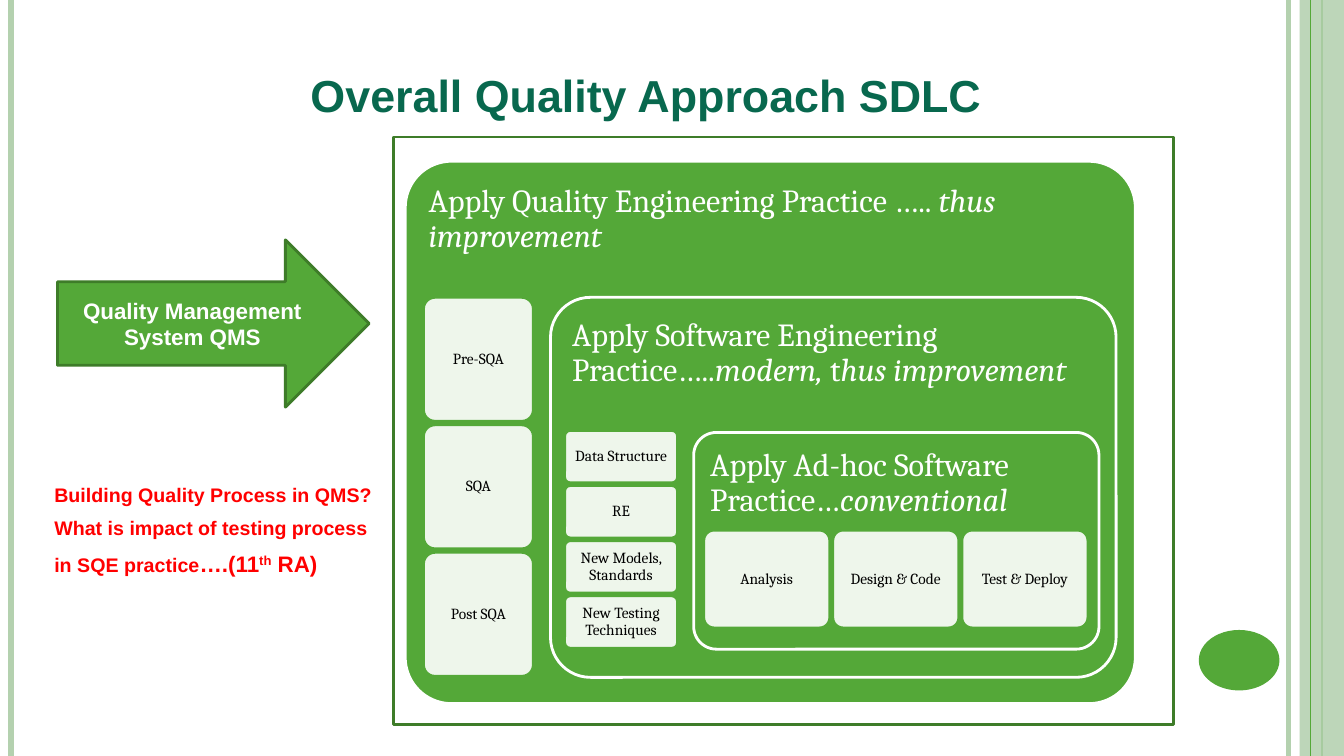
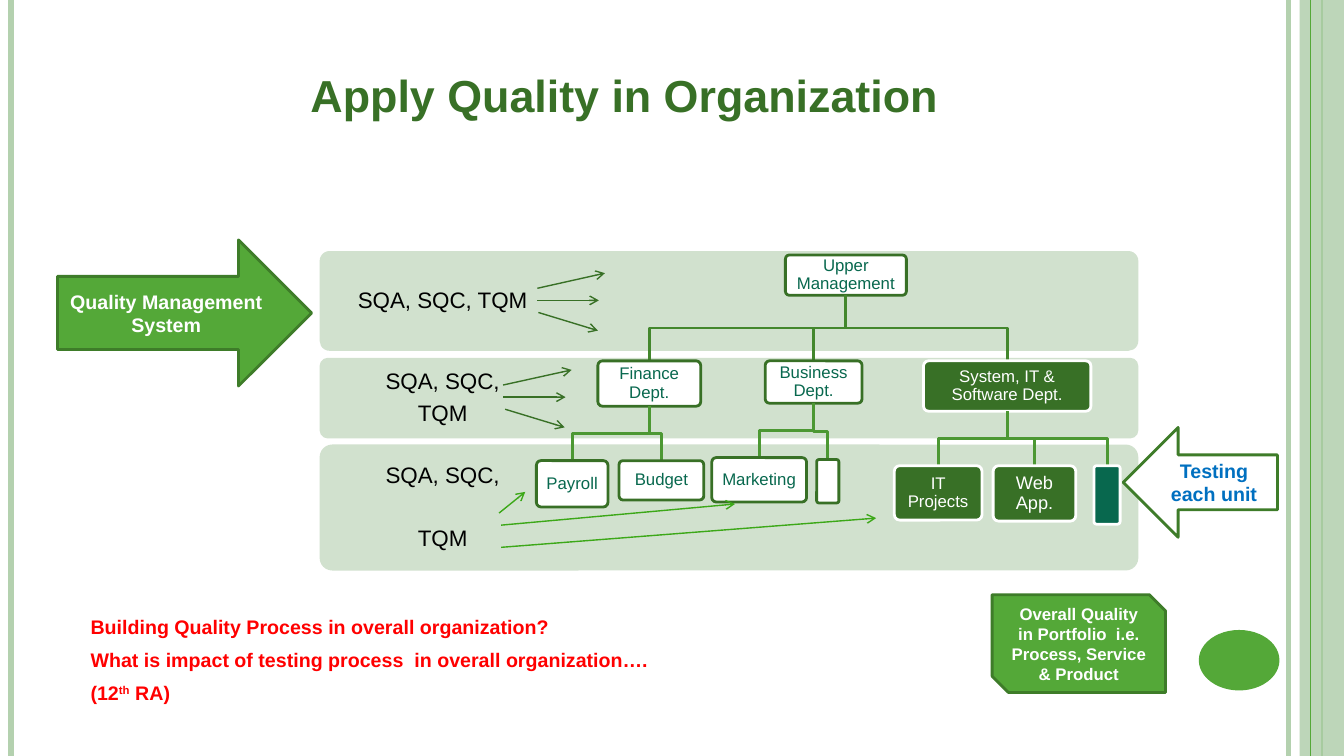
"""Build two slides on quality management in development and in an organization."""
from lxml import etree
from pptx import Presentation
from pptx import util as u
from pptx.dml.color import RGBColor
from pptx.enum import shapes, text
from pptx.oxml.ns import qn

WIDTH, HEIGHT = 13.33, 7.5
GREEN, EDGE, DARK, TEAL = "54A838", "3E7C29", "387026", "08684E"
PALE, BAND, WHITE, BLACK, RED, BLUE = "B4D1AF", "D1E1CE", "FFFFFF", "000000", "FF0000", "0070C0"
BRANCH, TWIG, BRIGHT = "43872D", "4C9833", "3CA818"
KIND = shapes.MSO_SHAPE
MIDDLE, TOP = text.MSO_ANCHOR.MIDDLE, text.MSO_ANCHOR.TOP
CENTER, LEFT = text.PP_ALIGN.CENTER, text.PP_ALIGN.LEFT
ITALIC, RAISED, LARGE = {"italic": True}, {"raised": True}, {"size": 16}

SIDE_RULES = [(12.78, PALE, 3), (0.11, PALE, 4.5), (13.11, GREEN, 1.5), (13, GREEN, 0.75)]

PRACTICES = [
    {"box": (4.02, 1.6, 7.24, 5.38), "round": 0.085,
     "heading": [("Apply Quality Engineering Practice ….. ", {}), ("thus improvement", ITALIC)],
     "first": (4.2, 2.95, 1.09, 1.23), "step": (0, 1.265),
     "parts": ["Pre-SQA", "SQA", "Post SQA"]},
    {"box": (5.46, 2.95, 5.61, 3.77), "round": 0.105,
     "heading": [("Apply Software Engineering Practice…..", {}), ("modern, ", ITALIC),
                 ("t", {}), ("hus improvement", ITALIC)],
     "first": (5.6, 4.27, 1.12, 0.52), "step": (0, 0.547),
     "parts": ["Data Structure", "RE", "New Models, Standards", "New Testing Techniques"]},
    {"box": (6.88, 4.29, 4.02, 2.15), "round": 0.105,
     "heading": [("Apply Ad-hoc Software Practice…", {}), ("conventional", ITALIC)],
     "first": (6.98, 5.26, 1.25, 0.97), "step": (1.28, 0),
     "parts": ["Analysis", "Design & Code", "Test & Deploy"]},
]
SDLC_QUESTION = [
    "Building Quality Process in QMS?",
    "What is impact of testing process",
    [("in SQE practice", {}), ("….(11", LARGE), ("th", {**LARGE, **RAISED}), (" RA)", LARGE)],
]

LEVELS = [(2.49, 0.99, ["SQA, SQC, TQM"], 6),
          (3.55, 0.8, ["SQA, SQC,", "TQM"], 6),
          (4.41, 1.25, ["SQA, SQC,", "TQM"], 28)]
PLAIN, SOLID, ACCENT = (WHITE, DARK, TEAL), (DARK, WHITE, WHITE), (TEAL, WHITE, WHITE)
UNITS = [
    ("top", None, "Upper Management", (7.79, 2.53, 1.2, 0.4), PLAIN, 12),
    ("finance", "top", "Finance Dept.", (5.93, 3.58, 1.02, 0.45), PLAIN, 12),
    ("payroll", "finance", "Payroll", (5.32, 4.57, 0.71, 0.46), PLAIN, 12),
    ("budget", "finance", "Budget", (6.14, 4.57, 0.84, 0.39), PLAIN, 12),
    ("business", "top", "Business Dept.", (7.59, 3.58, 0.96, 0.42), PLAIN, 12),
    ("marketing", "business", "Marketing", (7.06, 4.54, 0.94, 0.44), PLAIN, 12),
    ("spare", "business", "", (8.1, 4.56, 0.22, 0.43), PLAIN, 12),
    ("system", "top", "System, IT & Software Dept.", (9.16, 3.58, 1.66, 0.5), SOLID, 12),
    ("projects", "system", "IT Projects", (8.87, 4.62, 0.87, 0.54), SOLID, 12),
    ("web", "system", "Web App.", (9.85, 4.62, 0.82, 0.55), SOLID, 13),
    ("tested", "system", "", (10.85, 4.62, 0.26, 0.58), ACCENT, 12),
]
POINTERS = {
    DARK: [(5.33, 2.86, 6, 2.71), (5.33, 2.98, 5.94, 2.98), (5.34, 3.1, 5.93, 3.28),
           (4.99, 3.82, 5.67, 3.67), (4.99, 3.94, 5.61, 3.94), (5.01, 4.06, 5.6, 4.24)],
    BRIGHT: [(4.95, 5.09, 5.21, 4.88), (4.97, 5.43, 8.69, 5.14), (4.97, 5.21, 7.29, 5)],
}
ORGANIZATION_QUESTION = [
    "Building Quality Process in overall organization?",
    "What is impact of testing process  in overall organization….",
    [("(12", {}), ("th", RAISED), (" RA)", {})],
]


def rgb(color):
    return RGBColor.from_string(color)


def inches(values):
    return [u.Inches(value) for value in values]


def write(shape, paragraphs, size, color, font="Arial", bold=False, align=CENTER,
          anchor=MIDDLE, pad=(0.1, 0.05, 0.1, 0.05), spacing=None, after=0, wrap=True):
    frame = shape.text_frame
    frame.word_wrap, frame.vertical_anchor = wrap, anchor
    (frame.margin_left, frame.margin_top,
     frame.margin_right, frame.margin_bottom) = inches(pad)
    for index, content in enumerate(paragraphs):
        paragraph = frame.add_paragraph() if index else frame.paragraphs[0]
        paragraph.alignment, paragraph.space_after = align, u.Pt(after)
        if spacing:
            paragraph.line_spacing = spacing
        for words, style in [(content, {})] if isinstance(content, str) else content:
            run = paragraph.add_run()
            run.text = words
            run.font.name, run.font.bold = font, bold
            run.font.size = u.Pt(style.get("size", size))
            run.font.italic = style.get("italic", False)
            run.font.color.rgb = rgb(color)
            if style.get("raised"):
                run.font._element.set("baseline", "30000")


def stroke(shape, color, width):
    shape.line.color.rgb = rgb(color)
    shape.line.width = u.Pt(width)


def draw(slide, kind, box, fill=None, edge=None, opacity=None, rounding=None):
    shape = slide.shapes.add_shape(kind, *inches(box))
    shape.shadow.inherit = False
    if rounding is not None:
        shape.adjustments[0] = rounding
    if fill:
        shape.fill.solid()
        shape.fill.fore_color.rgb = rgb(fill)
        if opacity:
            tint = shape._element.spPr.find(".//" + qn("a:srgbClr"))
            etree.SubElement(tint, qn("a:alpha")).set("val", str(opacity * 1000))
    else:
        shape.fill.background()
    if edge:
        stroke(shape, edge, 2)
    else:
        shape.line.fill.background()
    return shape


def rule(slide, ends, color, width, arrow=False):
    line = slide.shapes.add_connector(shapes.MSO_CONNECTOR.STRAIGHT, *inches(ends))
    stroke(line, color, width)
    if arrow:
        etree.SubElement(line.line._get_or_add_ln(), qn("a:tailEnd")).set("type", "arrow")
    etree.SubElement(line._element.spPr, qn("a:effectLst"))


def branch(slide, parent, child, color):
    start, bottom = parent[0] + parent[2] / 2, parent[1] + parent[3]
    end, top = child[0] + child[2] / 2, child[1]
    middle = (bottom + top) / 2
    outline = slide.shapes.build_freeform(u.Inches(start), u.Inches(bottom))
    outline.add_line_segments(
        [inches(point) for point in ((start, middle), (end, middle), (end, top))], close=False)
    path = outline.convert_to_shape()
    path.shadow.inherit = False
    path.fill.background()
    stroke(path, color, 2)


def text_box(slide, box, paragraphs, *args, **style):
    write(slide.shapes.add_textbox(*inches(box)), paragraphs, *args,
          align=LEFT, anchor=TOP, bold=True, **style)


def question(slide, box, paragraphs):
    text_box(slide, box, paragraphs, 14, RED, spacing=1.4)


def callout(slide, kind, box, words, size, color=WHITE, fill=GREEN):
    write(draw(slide, kind, box, fill, EDGE), [words], size, color, bold=True)


def new_slide(deck, title, color):
    slide = deck.slides.add_slide(deck.slide_layouts[6])
    for index, (x, tone, width) in enumerate(SIDE_RULES):
        if index == 3:
            draw(slide, KIND.RECTANGLE, (12.89, 0, 0.44, HEIGHT), PALE, opacity=87)
        rule(slide, (x, 0, x, HEIGHT), tone, width)
    draw(slide, KIND.OVAL, (11.89, 6.25, 0.8, 0.6), GREEN)
    text_box(slide, (3.08, 0.82, 6.7, 0.39), [title], 32, color,
             pad=(0, 0, 0, 0), spacing=u.Pt(27.6), wrap=False)
    return slide


def sdlc_slide(deck):
    slide = new_slide(deck, "Overall Quality Approach SDLC", TEAL)
    callout(slide, KIND.RIGHT_ARROW, (0.57, 2.38, 3.09, 1.66), "Quality Management System QMS", 16)
    for practice in PRACTICES:
        panel = draw(slide, KIND.ROUNDED_RECTANGLE, practice["box"], GREEN, WHITE,
                     rounding=practice["round"])
        write(panel, [practice["heading"]], 23, WHITE, "Cambria", align=LEFT, anchor=TOP,
              pad=(0.1,) * 4, spacing=0.9)
        x, y, width, height = practice["first"]
        dx, dy = practice["step"]
        for index, label in enumerate(practice["parts"]):
            part = draw(slide, KIND.ROUNDED_RECTANGLE,
                        (x + index * dx, y + index * dy, width, height),
                        WHITE, GREEN, opacity=90, rounding=0.105)
            write(part, [label], 11, BLACK, "Cambria", pad=(0.05,) * 4, spacing=0.9)
    draw(slide, KIND.RECTANGLE, (3.9, 1.36, 7.74, 5.83), edge=EDGE)
    question(slide, (0.44, 4.65, 3.59, 1.51), SDLC_QUESTION)


def organization_slide(deck):
    slide = new_slide(deck, "Apply Quality in Organization", DARK)
    callout(slide, KIND.RIGHT_ARROW, (0.57, 2.38, 2.52, 1.45), "Quality Management System", 14)
    for top, height, lines, gap in LEVELS:
        level = draw(slide, KIND.ROUNDED_RECTANGLE, (3.17, top, 8.12, height), BAND, rounding=0.1)
        write(level, lines, 16, BLACK, pad=(0.12, 0.12, 5.8, 0.12), spacing=0.9, after=gap)
        level.text_frame.paragraphs[-1].space_after = u.Pt(0)
    boxes = {}
    for key, parent, label, box, (fill, edge, color), size in UNITS:
        boxes[key] = box
        if parent:
            branch(slide, boxes[parent], box, BRANCH if parent == "top" else TWIG)
        unit = draw(slide, KIND.ROUNDED_RECTANGLE, box, fill, edge, rounding=0.1)
        if label:
            write(unit, [label], size, color, pad=(0.05,) * 4, spacing=0.9)
    callout(slide, KIND.LEFT_ARROW, (11.14, 4.24, 1.53, 1.09), "Testing each unit", 14, BLUE, WHITE)
    for color, pointers in POINTERS.items():
        for ends in pointers:
            rule(slide, ends, color, 1, arrow=True)
    callout(slide, KIND.SNIP_2_DIAG_RECTANGLE, (9.84, 5.9, 1.72, 0.97),
            "Overall Quality in Portfolio  i.e. Process, Service & Product", 12)
    question(slide, (0.8, 5.96, 5.94, 1.09), ORGANIZATION_QUESTION)


def main():
    deck = Presentation()
    deck.slide_width, deck.slide_height = inches((WIDTH, HEIGHT))
    sdlc_slide(deck)
    organization_slide(deck)
    deck.save("out.pptx")


if __name__ == "__main__":
    main()
